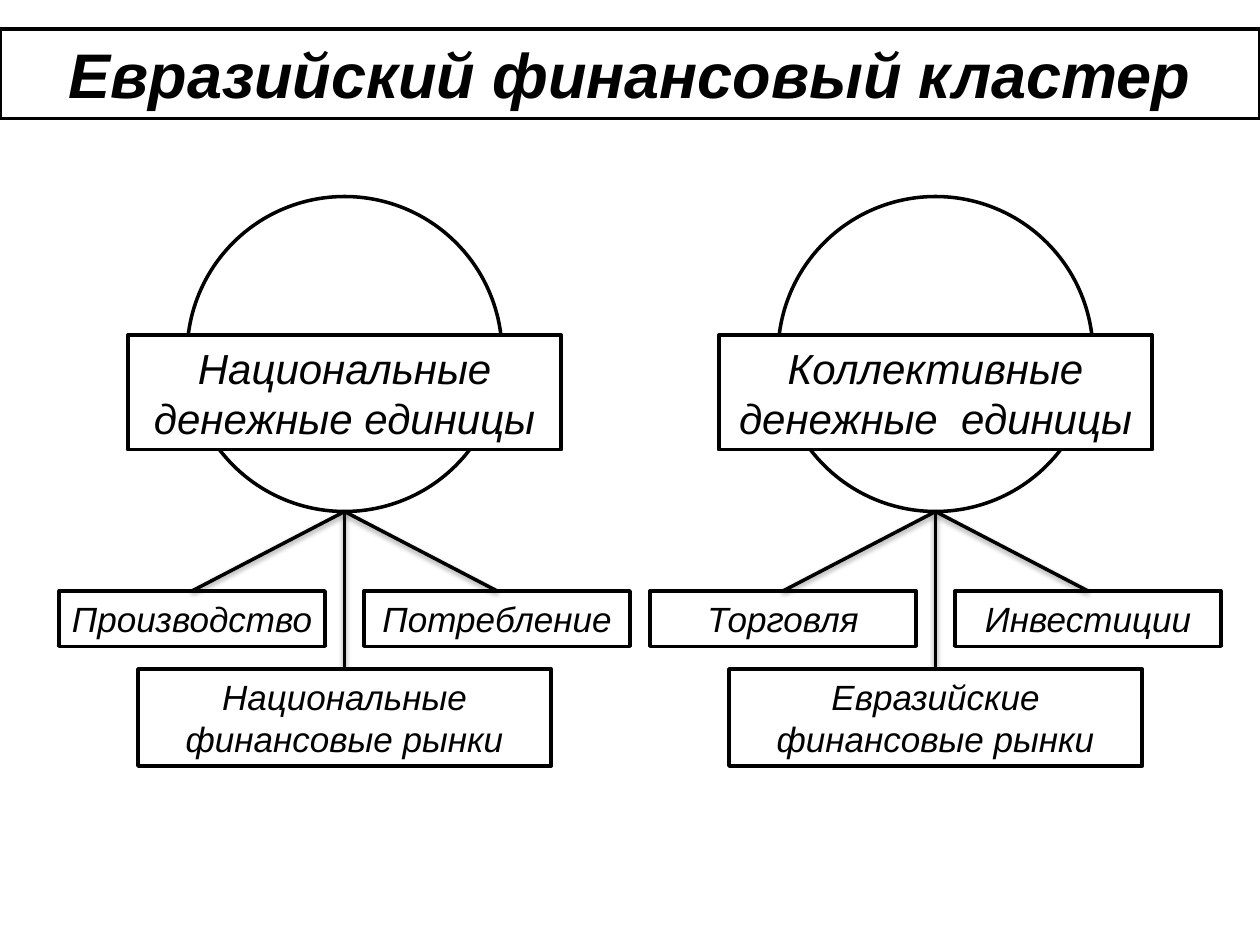
import pptx
import pptx.dml.color
import pptx.enum.shapes
import pptx.enum.text
import pptx.util

Inches = pptx.util.Inches
Shape = pptx.enum.shapes.MSO_SHAPE

BLACK = pptx.dml.color.RGBColor(0, 0, 0)
WHITE = pptx.dml.color.RGBColor(255, 255, 255)

CLUSTER_TOP = Inches(1.56)
CLUSTER_WIDTH = Inches(4.53)
CLUSTERS = [
    (Inches(0.47), "Национальные денежные единицы",
     ["Производство", "Потребление"], "Национальные финансовые рынки"),
    (Inches(5.16), "Коллективные денежные  единицы",
     ["Торговля", "Инвестиции"], "Евразийские финансовые рынки"),
]


def outline(shape):
    """Give a shape the white fill and black border shared by the slide."""
    shape.fill.solid()
    shape.fill.fore_color.rgb = WHITE
    shape.line.color.rgb = BLACK
    shape.line.width = pptx.util.Pt(2)


def write(shape, text, size, bold=False):
    frame = shape.text_frame
    frame.word_wrap = True
    frame.auto_size = pptx.enum.text.MSO_AUTO_SIZE.NONE
    frame.vertical_anchor = pptx.enum.text.MSO_ANCHOR.MIDDLE
    paragraph = frame.paragraphs[0]
    paragraph.alignment = pptx.enum.text.PP_ALIGN.CENTER
    run = paragraph.add_run()
    run.text = text
    run.font.name = "Arial"
    run.font.size = pptx.util.Pt(size)
    run.font.bold = bold
    run.font.italic = True
    run.font.color.rgb = BLACK


def add_outlined(slide, kind, center, top, width, height):
    """Add an outlined shape centred horizontally on the given position."""
    shape = slide.shapes.add_shape(kind, center - width // 2, top, width, height)
    shape.shadow.inherit = False
    outline(shape)
    return shape


def add_label(slide, text, size, center, top, width, height):
    label = add_outlined(slide, Shape.RECTANGLE, center, top, width, height)
    write(label, text, size)


def add_branch(slide, start, end):
    """Add a black line that keeps the soft shadow of the theme."""
    branch = slide.shapes.add_connector(
        pptx.enum.shapes.MSO_CONNECTOR.STRAIGHT, *start, *end)
    branch.line.color.rgb = BLACK
    branch.line.width = pptx.util.Pt(2)


def add_title(slide, left, top, width, height):
    title = slide.shapes.title
    title.left, title.top, title.width, title.height = left, top, width, height
    outline(title)
    write(title, "Евразийский финансовый кластер", 36, bold=True)


def add_cluster(slide, left, top, width, currency, activities, markets):
    """Add a currency circle with branches to two activities and a market."""
    center = left + width // 2
    circle_size = Inches(2.5)
    hub = (center, top + circle_size)
    activity_top = top + Inches(3.13)
    activity_width = Inches(2.11)
    markets_top = top + Inches(3.75)
    activity_centers = [left + activity_width // 2,
                        left + width - activity_width // 2]

    add_branch(slide, hub, (center, markets_top))
    add_outlined(slide, Shape.OVAL, center, top, circle_size, circle_size)
    add_label(slide, currency, 24, center, top + Inches(1.1),
              Inches(3.44), Inches(0.91))
    for activity, activity_center in zip(activities, activity_centers):
        add_label(slide, activity, 20, activity_center, activity_top,
                  activity_width, Inches(0.44))
        add_branch(slide, hub, (activity_center, activity_top))
    add_label(slide, markets, 20, center, markets_top,
              Inches(3.28), Inches(0.77))


def main():
    presentation = pptx.Presentation()
    presentation.slide_width = Inches(10)
    presentation.slide_height = Inches(7.5)
    slide = presentation.slides.add_slide(presentation.slide_layouts[5])
    add_title(slide, 0, Inches(0.23), presentation.slide_width, Inches(0.71))
    for left, currency, activities, markets in CLUSTERS:
        add_cluster(slide, left, CLUSTER_TOP, CLUSTER_WIDTH,
                    currency, activities, markets)
    presentation.save("out.pptx")


if __name__ == "__main__":
    main()
